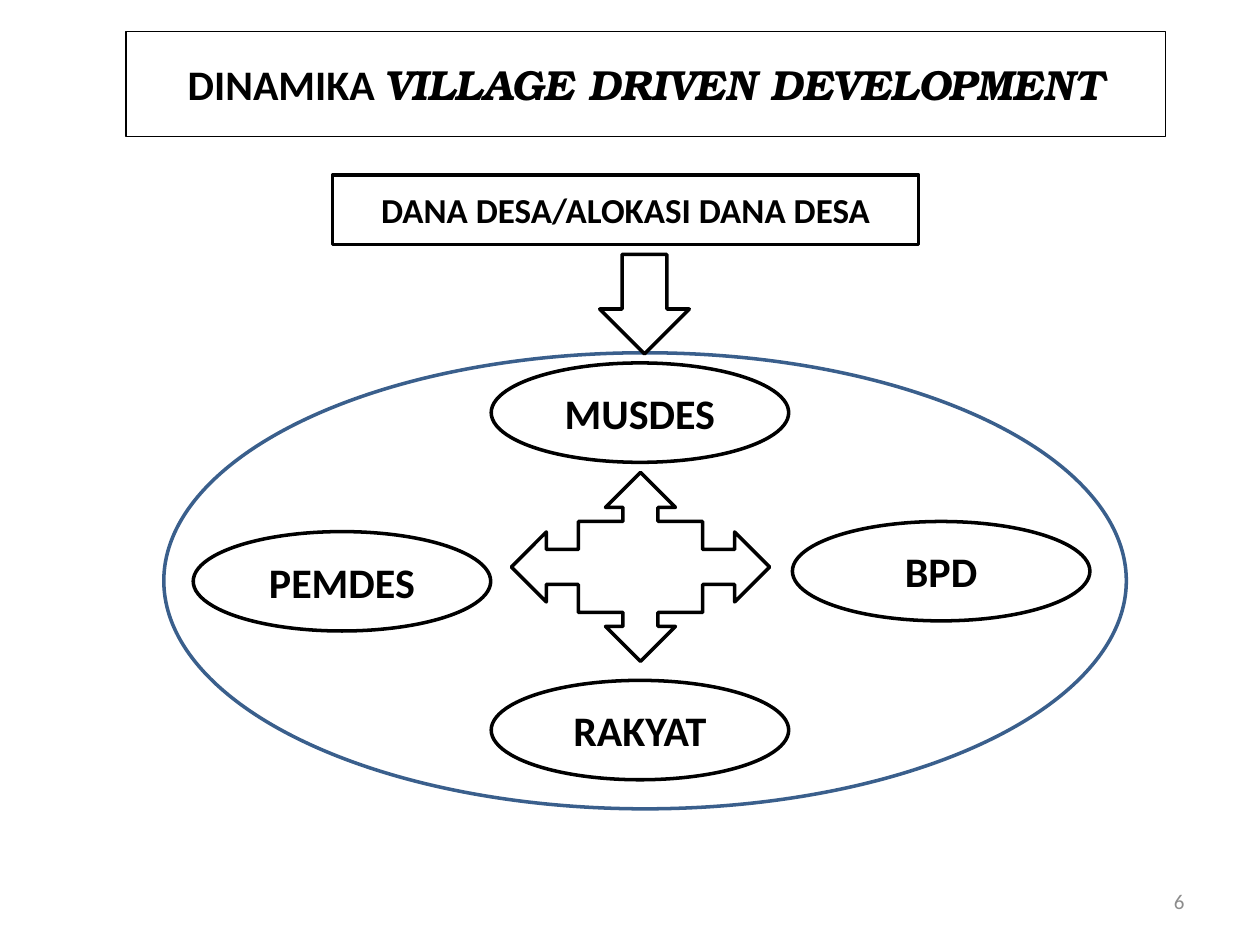
from dataclasses import dataclass

from pptx import Presentation
from pptx.dml.color import RGBColor
from pptx.enum import shapes, text
from pptx.util import Pt

KIND = shapes.MSO_SHAPE


@dataclass(frozen=True)
class Theme:
    body_font: str = "Calibri"
    accent_font: str = "TeX Gyre Bonum"
    ink: RGBColor = RGBColor(0, 0, 0)
    paper: RGBColor = RGBColor(255, 255, 255)
    ring: RGBColor = RGBColor(0x3A, 0x5F, 0x8C)
    muted: RGBColor = RGBColor(0x8C, 0x8C, 0x8C)
    large: int = 24
    medium: int = 20
    small: int = 12
    thin: float = 0.75
    thick: float = 2


THEME = Theme()

TITLE = [("DINAMIKA ", False), ("VILLAGE DRIVEN DEVELOPMENT", True)]
TITLE_BOX = (72, 18, 594, 60)
FUNDING = "DANA DESA/ALOKASI DANA DESA"
FUNDING_BOX = (190, 100, 335, 39.6)
FUNDING_ARROW = (342.7, 145.4, 51.2, 56.8)
VILLAGE_RING = (93.6, 201.6, 550, 260.6)
ACTOR_SIZE = (170, 56.8)
ACTORS = [  # name, left, top
    ("MUSDES", 280.7, 207.4),
    ("PEMDES", 110.4, 303.8),
    ("BPD", 452.8, 298),
    ("RAKYAT", 280.7, 388.8),
]
EXCHANGE_ARROWS = (292.2, 270, 147.6, 108)
PAGE_NUMBER = "6"
PAGE_NUMBER_BOX = (516, 500.5, 168, 28.8)


def place(box):
    return [Pt(length) for length in box]


def style_text(paragraph, align, size, color, bold=False):
    paragraph.alignment = align
    font = paragraph.font
    font.name, font.size, font.bold = THEME.body_font, Pt(size), bold
    font.color.rgb = color


def outline(shape, color, width):
    shape.line.color.rgb = color
    shape.line.width = Pt(width)


def add_figure(slide, kind, box, label="", size=THEME.large,
               line=THEME.ink, filled=True):
    figure = slide.shapes.add_shape(kind, *place(box))
    figure.shadow.inherit = False
    if filled:
        figure.fill.solid()
        figure.fill.fore_color.rgb = THEME.paper
    else:
        figure.fill.background()
    outline(figure, line, THEME.thick)
    if label:
        frame = figure.text_frame
        frame.text = label
        frame.vertical_anchor = text.MSO_ANCHOR.MIDDLE
        style_text(frame.paragraphs[0], text.PP_ALIGN.CENTER, size,
                   THEME.ink, bold=True)


def add_title(slide):
    title = slide.shapes.title
    title.left, title.top, title.width, title.height = place(TITLE_BOX)
    outline(title, THEME.ink, THEME.thin)
    frame = title.text_frame
    frame.auto_size = text.MSO_AUTO_SIZE.NONE
    frame.word_wrap = False
    frame.vertical_anchor = text.MSO_ANCHOR.MIDDLE
    heading = frame.paragraphs[0]
    style_text(heading, text.PP_ALIGN.CENTER, THEME.large, THEME.ink, bold=True)
    for words, accented in TITLE:
        run = heading.add_run()
        run.text = words
        if accented:
            run.font.name, run.font.italic = THEME.accent_font, True


def add_page_number(slide):
    frame = slide.shapes.add_textbox(*place(PAGE_NUMBER_BOX)).text_frame
    frame.word_wrap = True
    frame.vertical_anchor = text.MSO_ANCHOR.MIDDLE
    frame.text = PAGE_NUMBER
    style_text(frame.paragraphs[0], text.PP_ALIGN.RIGHT, THEME.small, THEME.muted)


def main():
    deck = Presentation()
    deck.slide_width, deck.slide_height = Pt(720), Pt(540)
    slide = deck.slides.add_slide(deck.slide_layouts.get_by_name("Title Only"))

    add_title(slide)
    add_page_number(slide)
    add_figure(slide, KIND.OVAL, VILLAGE_RING, line=THEME.ring, filled=False)
    add_figure(slide, KIND.RECTANGLE, FUNDING_BOX, FUNDING, THEME.medium)
    add_figure(slide, KIND.DOWN_ARROW, FUNDING_ARROW)
    for name, left, top in ACTORS:
        add_figure(slide, KIND.OVAL, (left, top, *ACTOR_SIZE), name)
    add_figure(slide, KIND.QUAD_ARROW_CALLOUT, EXCHANGE_ARROWS)

    deck.save("out.pptx")


if __name__ == "__main__":
    main()
